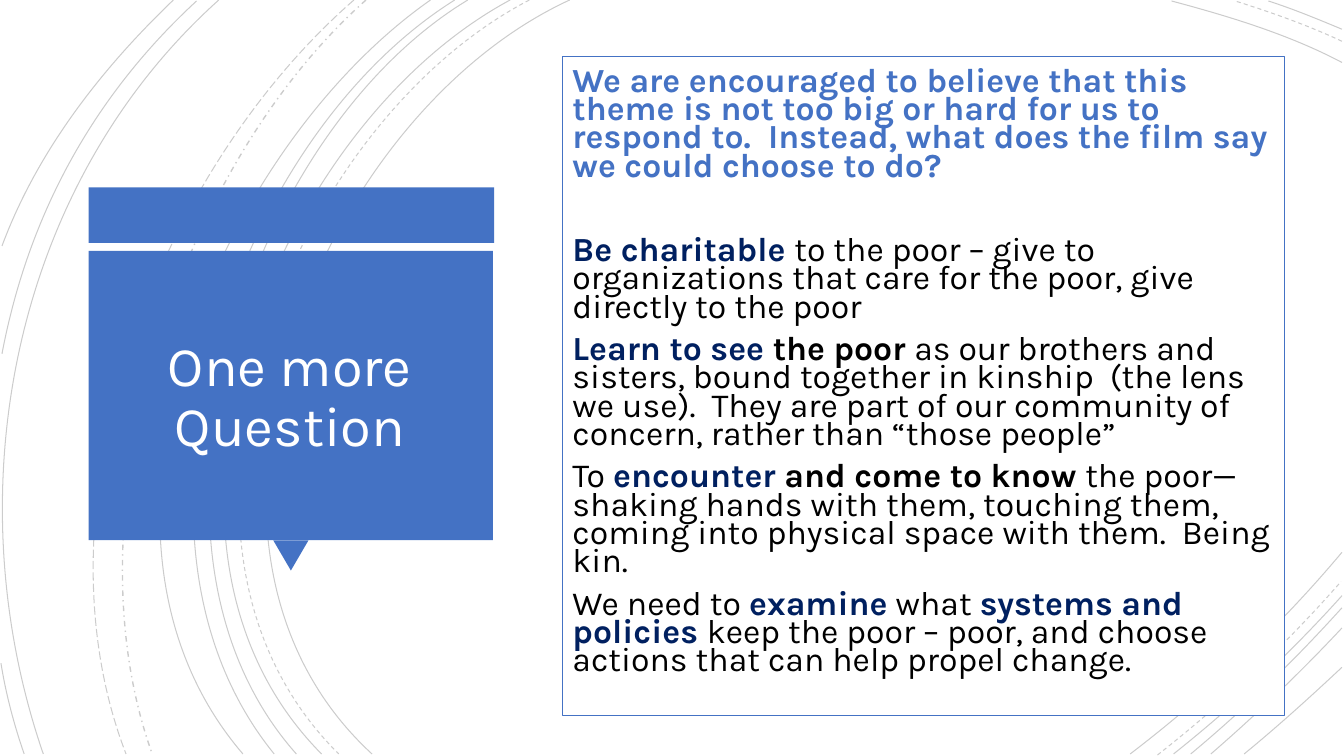
from typing import NamedTuple

from lxml.etree import SubElement
from pptx import Presentation
from pptx.dml.color import RGBColor
from pptx.enum.dml import MSO_LINE
from pptx.enum.shapes import MSO_SHAPE
from pptx.enum.text import MSO_ANCHOR, PP_ALIGN
from pptx.oxml.ns import qn
from pptx.util import Inches, Pt

FONT = "Karla"
BLUE, NAVY, BLACK, WHITE = "4472C4", "002060", "000000", "FFFFFF"
ARC_OPACITY = 20  # percent


class Arc(NamedTuple):
    """A cubic curve: start, two control points and end, in inches."""
    start: tuple[float, float]
    control_1: tuple[float, float]
    control_2: tuple[float, float]
    end: tuple[float, float]
    dash: MSO_LINE = MSO_LINE.SOLID
    weight: float = 0.75


class Block(NamedTuple):
    left: float
    top: float
    width: float
    height: float
    preset: MSO_SHAPE = MSO_SHAPE.RECTANGLE
    rotation: float = 0
    fill: str = BLUE
    outline: str | None = None


class Phrase(NamedTuple):
    text: str
    color: str = BLACK
    bold: bool = False


class Passage(NamedTuple):
    phrases: list[Phrase]
    space_before: float = 10


ARCS = [
    Arc((5.65, 0), (3.15, 1.15), (1.43, 5.4), (3.69, 7.48)),
    Arc((13.31, 0.62), (12.78, 0.34), (12.18, 0.16), (11.62, 0.01)),
    Arc((11.21, 7.48), (11.97, 6.9), (12.69, 6.22), (13.31, 5.48)),
    Arc((5.25, 0), (2.85, 1.25), (1.23, 5.37), (3.36, 7.48), MSO_LINE.DASH),
    Arc((13.31, 0.41), (12.97, 0.25), (12.6, 0.12), (12.25, 0.01), MSO_LINE.DASH),
    Arc((11.48, 7.49), (12.13, 6.98), (12.75, 6.4), (13.3, 5.77), MSO_LINE.DASH),
    Arc((5.06, 0), (2.7, 1.27), (1.1, 5.37), (3.19, 7.48)),
    Arc((13.31, 0.29), (13.07, 0.19), (12.83, 0.09), (12.58, 0.01)),
    Arc((11.64, 7.48), (12.23, 7.01), (12.8, 6.48), (13.31, 5.91)),
    Arc((4.64, 0), (2.44, 1.33), (1.1, 5.41), (2.94, 7.48)),
    Arc((11.81, 7.48), (12.34, 7.04), (12.84, 6.55), (13.31, 6.03)),
    Arc((4.51, 0), (2.31, 1.38), (0.97, 5.33), (2.72, 7.48)),
    Arc((12.01, 7.48), (12.46, 7.09), (12.9, 6.67), (13.31, 6.23)),
    Arc((4.27, 0), (2.17, 1.47), (0.53, 5.29), (2.41, 7.48)),
    Arc((12.34, 7.48), (12.67, 7.21), (12.99, 6.92), (13.31, 6.62)),
    Arc((3.63, 0), (1.76, 1.66), (0.65, 5.09), (1.51, 7.48), MSO_LINE.DASH_DOT, 1),
    Arc((3.51, 0), (1.57, 1.69), (0.29, 4.99), (1.25, 7.48), MSO_LINE.LONG_DASH),
    Arc((2.17, 0), (0.11, 1.85), (-0.46, 4.9), (0.43, 7.48)),
    Arc((1.95, 0.01), (0.92, 0.96), (0.28, 2.14), (0.02, 3.51)),
    Arc((0.01, 6.58), (0.06, 6.89), (0.14, 7.19), (0.24, 7.48)),
    Arc((1.72, 0), (1, 0.69), (0.37, 1.5), (0.02, 2.44)),
]

TITLE_BLOCKS = [
    Block(0.88, 1.86, 4.02, 0.55),
    Block(2.71, 5.36, 0.35, 0.3, MSO_SHAPE.ISOSCELES_TRIANGLE, 180),
    Block(0.88, 2.49, 4.01, 2.87),
]
ANSWER_PANEL = Block(5.58, 0.56, 7.16, 6.54, fill=WHITE, outline=BLUE)

TITLE = [Passage([Phrase("One more Question", WHITE)], 0)]
ANSWERS = [
    Passage([Phrase("We are encouraged to believe that this theme is not too big or hard "
                    "for us to respond to.  Instead, what does the film say we could "
                    "choose to do?", BLUE, True)], 0),
    Passage([Phrase("Be charitable ", NAVY, True),
             Phrase("to the poor – give to organizations that care for the poor, "
                    "give directly to the poor")], 40),
    Passage([Phrase("Learn to see ", NAVY, True),
             Phrase("the poor ", bold=True),
             Phrase("as our brothers and sisters, bound together in kinship  (the lens "
                    "we use).  They are part of our community of concern, rather than "
                    "“those people”")]),
    Passage([Phrase("To "),
             Phrase("encounter", NAVY, True),
             Phrase(" and come to know ", bold=True),
             Phrase("the poor—shaking hands with them, touching them, coming into "
                    "physical space with them.  Being kin.")]),
    Passage([Phrase("We need to "),
             Phrase("examine", NAVY, True),
             Phrase(" what "),
             Phrase("systems and policies ", NAVY, True),
             Phrase("keep the poor – poor, and choose actions that can help propel "
                    "change.")]),
]


def rgb(value: str) -> RGBColor:
    return RGBColor.from_string(value)


def draw_arc(slide, arc: Arc) -> None:
    start, *rest = [(Inches(x), Inches(y)) for x, y in arc[:4]]
    builder = slide.shapes.build_freeform(*start)
    builder.add_line_segments(rest, close=False)
    curve = builder.convert_to_shape()
    curve.shadow.inherit = False
    curve.fill.background()
    curve.line.color.rgb = rgb(BLACK)
    curve.line.width = Pt(arc.weight)
    curve.line.dash_style = arc.dash
    color = next(curve.line._ln.iter(qn("a:srgbClr")))
    SubElement(color, qn("a:alpha")).set("val", str(ARC_OPACITY * 1000))

    # Turn the three straight segments into one cubic segment.
    segments = list(curve._element.iter(qn("a:lnTo")))
    outline = segments[0].getparent()
    bezier = SubElement(outline, qn("a:cubicBezTo"))
    for segment in segments:
        bezier.append(segment[0])
        outline.remove(segment)


def draw_block(slide, block: Block):
    shape = slide.shapes.add_shape(block.preset, *map(Inches, block[:4]))
    shape.shadow.inherit = False
    shape.rotation = block.rotation
    shape.fill.solid()
    shape.fill.fore_color.rgb = rgb(block.fill)
    if block.outline:
        shape.line.color.rgb = rgb(block.outline)
        shape.line.width = Pt(1)
    else:
        shape.line.fill.background()
    return shape


def write_text(shape, passages: list[Passage], *, size: float, line_spacing: float,
               align: PP_ALIGN, anchor: MSO_ANCHOR, top_inset: float = 0.05) -> None:
    frame = shape.text_frame
    frame.word_wrap = True
    frame.vertical_anchor = anchor
    frame.margin_top = Inches(top_inset)
    for index, passage in enumerate(passages):
        paragraph = frame.add_paragraph() if index else frame.paragraphs[0]
        paragraph.alignment = align
        paragraph.line_spacing = line_spacing
        paragraph.space_before = Pt(passage.space_before)
        for phrase in passage.phrases:
            run = paragraph.add_run()
            run.text = phrase.text
            run.font.name = FONT
            run.font.size = Pt(size)
            run.font.bold = phrase.bold
            run.font.color.rgb = rgb(phrase.color)


def main() -> None:
    deck = Presentation()
    deck.slide_width, deck.slide_height = Inches(13.33), Inches(7.5)
    slide = deck.slides.add_slide(deck.slide_layouts[6])

    for arc in ARCS:
        draw_arc(slide, arc)
    for block in TITLE_BLOCKS:
        draw_block(slide, block)

    title = slide.shapes.add_textbox(Inches(0.99), Inches(2.64), Inches(3.77), Inches(2.62))
    write_text(title, TITLE, size=40, line_spacing=0.9,
               align=PP_ALIGN.CENTER, anchor=MSO_ANCHOR.MIDDLE)
    write_text(draw_block(slide, ANSWER_PANEL), ANSWERS, size=24.1, line_spacing=0.7,
               align=PP_ALIGN.LEFT, anchor=MSO_ANCHOR.TOP, top_inset=0.13)

    deck.save("out.pptx")


if __name__ == "__main__":
    main()
